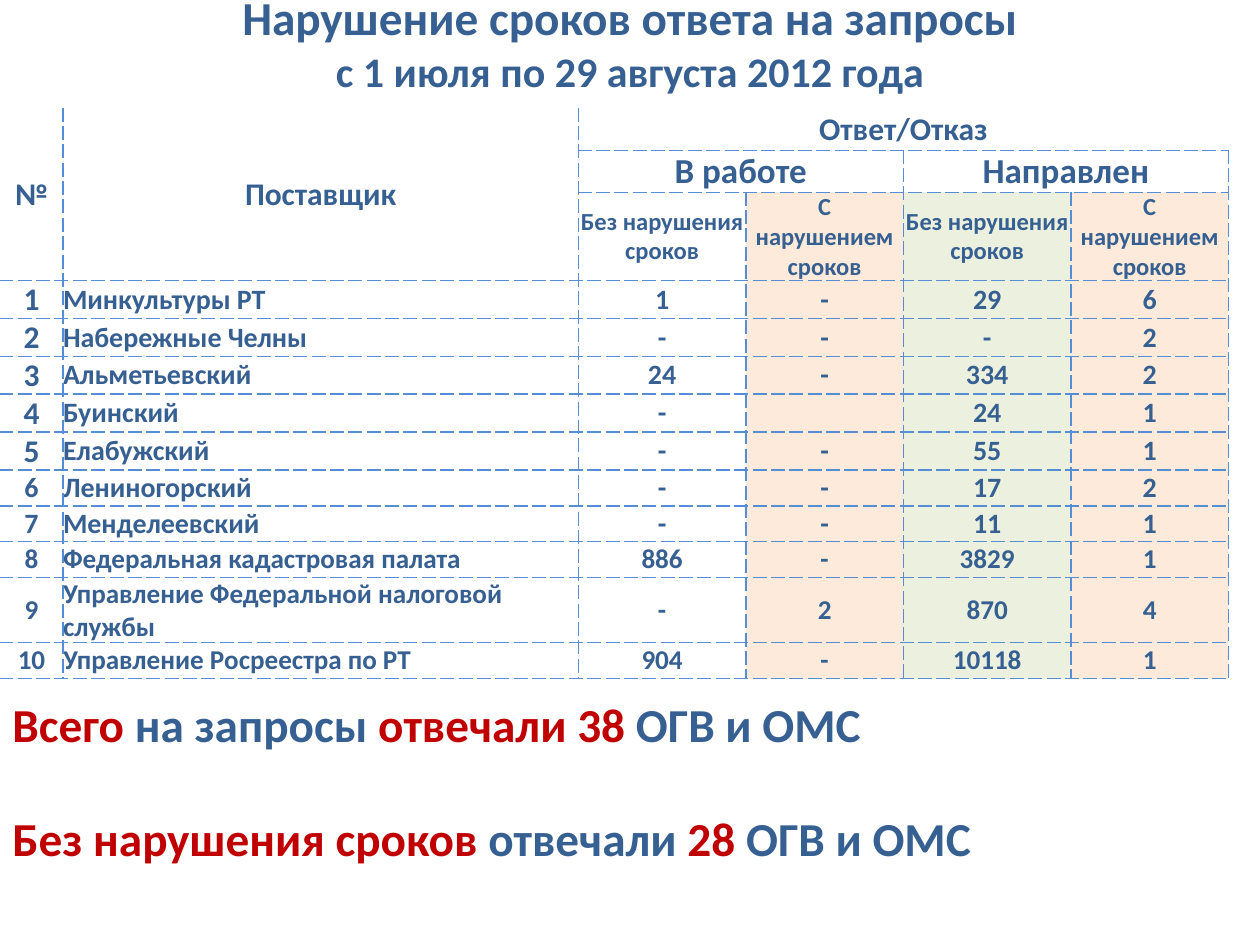
from lxml import etree
from pptx import Presentation
from pptx import util as u
from pptx.dml.color import RGBColor
from pptx.enum import text
from pptx.oxml import ns

BLUE, RED, BORDER = "376092", "C00000", "558ED5"
ORANGE, GREEN = "FDEADA", "EBF1DE"
COLUMN_FILLS = [None, None, None, ORANGE, GREEN, ORANGE]
COLUMN_WIDTHS = [0.5, 4.09, 1.33, 1.25, 1.33, 1.25]
ROW_POINTS = [24, 24, 34, 17.5] + [20.5] * 9
CENTER, LEFT = text.PP_ALIGN.CENTER, text.PP_ALIGN.LEFT

# row, column, rows spanned, columns spanned, text, size
HEADERS = [
    (0, 0, 3, 1, "№", 18),
    (0, 1, 3, 1, "Поставщик", 18),
    (0, 2, 1, 4, "Ответ/Отказ", 18),
    (1, 2, 1, 2, "В работе", 20),
    (1, 4, 1, 2, "Направлен", 20),
] + [
    (2, column, 1, 1, label + " сроков", 14)
    for column, label in enumerate(["Без нарушения", "С нарушением"] * 2, 2)
]

SUPPLIERS = [
    ("Минкультуры РТ", "1", "-", "29", "6"),
    ("Набережные Челны", "-", "-", "-", "2"),
    ("Альметьевский", "24", "-", "334", "2"),
    ("Буинский", "-", "", "24", "1"),
    ("Елабужский", "-", "-", "55", "1"),
    ("Лениногорский", "-", "-", "17", "2"),
    ("Менделеевский", "-", "-", "11", "1"),
    ("Федеральная кадастровая палата", "886", "-", "3829", "1"),
    ("Управление Федеральной налоговой службы", "-", "2", "870", "4"),
    ("Управление Росреестра по РТ", "904", "-", "10118", "1"),
]


def color(value):
    return RGBColor.from_string(value)


def write(paragraph, *runs, size, align=LEFT, space_before=0):
    """Fill a paragraph with (text, colour) runs."""
    paragraph.alignment = align
    paragraph.space_before = u.Pt(space_before)
    for content, run_color in runs:
        run = paragraph.add_run()
        run.text = content
        run.font.name = "Calibri"
        run.font.size = u.Pt(size)
        run.font.bold = True
        run.font.color.rgb = color(run_color)


def place(shape, left, top, width, height):
    shape.left, shape.top = u.Inches(left), u.Inches(top)
    shape.width, shape.height = u.Inches(width), u.Inches(height)


def prepare_frame(frame):
    frame.word_wrap = True
    frame.auto_size = text.MSO_AUTO_SIZE.SHAPE_TO_FIT_TEXT
    frame.vertical_anchor = text.MSO_ANCHOR.TOP


def add_title(slide):
    title = slide.shapes.title
    place(title, 0, -0.14, 10, 0.96)
    frame = title.text_frame
    prepare_frame(frame)
    write(frame.paragraphs[0], ("Нарушение сроков ответа на запросы", BLUE),
          size=27, align=CENTER)
    write(frame.add_paragraph(), ("с 1 июля по 29 августа 2012 года", BLUE),
          size=24, align=CENTER)


def add_border(cell, side):
    line = etree.SubElement(cell._tc.get_or_add_tcPr(), ns.qn("a:ln" + side),
                            w=str(u.Pt(1)))
    fill = etree.SubElement(line, ns.qn("a:solidFill"))
    etree.SubElement(fill, ns.qn("a:srgbClr"), val=BORDER)
    etree.SubElement(line, ns.qn("a:prstDash"), val="sysDash")


def border_sides(row, column):
    """Sides to draw; the table is open at the left and the top."""
    sides = "L" if column else ""
    sides += "R" if row or column < 2 else ""
    sides += "T" if row else ""
    return sides + "B"


def format_cell(cell, row, column):
    fill_color = COLUMN_FILLS[column] if row > 1 else None
    # A hair of side margin keeps "С" on a line of its own in the narrow headers.
    side_margin = 0.02 if row == 2 and fill_color == ORANGE else 0
    cell.margin_left = cell.margin_right = u.Inches(side_margin)
    cell.margin_top = cell.margin_bottom = 0
    cell.vertical_anchor = text.MSO_ANCHOR.MIDDLE
    if not cell.is_spanned:
        for side in border_sides(row, column):
            add_border(cell, side)
    if fill_color:
        cell.fill.solid()
        cell.fill.fore_color.rgb = color(fill_color)
    else:
        cell.fill.background()


def write_cell(cell, content, size, align=CENTER):
    write(cell.text_frame.paragraphs[0], (content, BLUE), size=size, align=align)


def add_table(slide):
    frame = slide.shapes.add_table(len(ROW_POINTS), len(COLUMN_WIDTHS), 0, 0, 0, 0)
    table = frame.table
    table.first_row = table.horz_banding = False
    for column, width in zip(table.columns, COLUMN_WIDTHS):
        column.width = u.Inches(width)
    for row, height in zip(table.rows, ROW_POINTS):
        row.height = u.Pt(height)
    place(frame, 0, 0.86, sum(COLUMN_WIDTHS), 4.31)

    for row, column, rows, columns, label, size in HEADERS:
        cell = table.cell(row, column)
        if rows * columns > 1:
            cell.merge(table.cell(row + rows - 1, column + columns - 1))
        write_cell(cell, label, size)
    for number, (name, *counts) in enumerate(SUPPLIERS, 1):
        row = number + 2
        size = 16 if number < 8 else 15.5
        write_cell(table.cell(row, 0), str(number), 18 if number < 6 else size)
        write_cell(table.cell(row, 1), name, size, LEFT)
        for column, count in enumerate(counts, 2):
            if count:
                write_cell(table.cell(row, column), count, size)
    for row in range(len(ROW_POINTS)):
        for column in range(len(COLUMN_WIDTHS)):
            format_cell(table.cell(row, column), row, column)


def add_summary(slide):
    box = slide.shapes.add_textbox(0, 0, 0, 0)
    place(box, 0, 5.47, 10, 1.46)
    frame = box.text_frame
    prepare_frame(frame)
    write(frame.paragraphs[0], ("Всего ", RED), ("на запросы ", BLUE),
          ("отвечали 38 ", RED), ("ОГВ и ОМС", BLUE), size=27)
    write(frame.add_paragraph(), ("Без нарушения сроков ", RED), ("отвечали ", BLUE),
          ("28 ", RED), ("ОГВ и ОМС", BLUE), size=27, space_before=32.5)


def main():
    presentation = Presentation()
    presentation.slide_width, presentation.slide_height = u.Inches(10), u.Inches(7.5)
    title_only = presentation.slide_layouts[5]
    slide = presentation.slides.add_slide(title_only)
    add_title(slide)
    add_table(slide)
    add_summary(slide)
    presentation.save("out.pptx")


if __name__ == "__main__":
    main()
